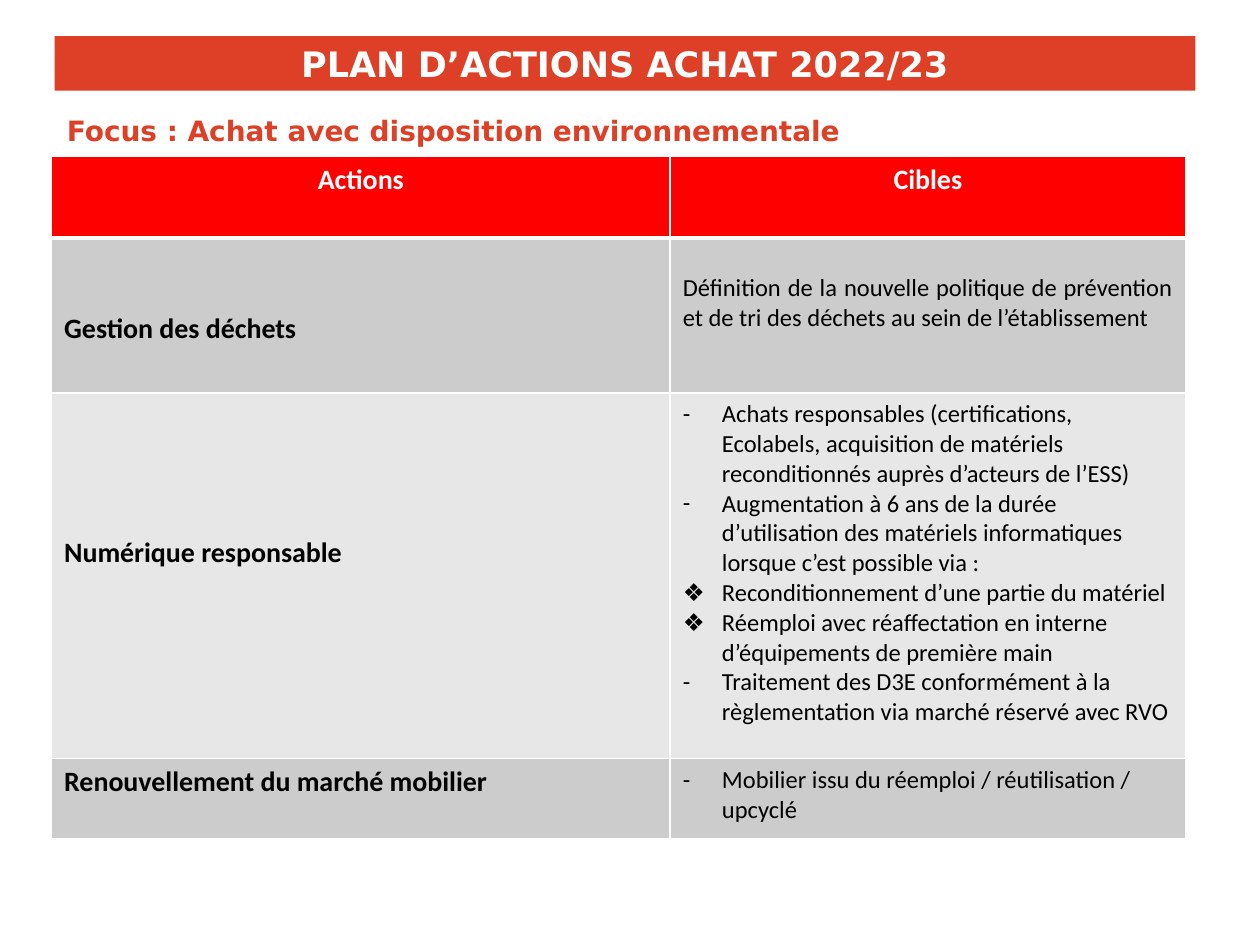
from dataclasses import dataclass

import pptx
import pptx.dml.color
import pptx.enum.shapes
import pptx.enum.text
import pptx.util
from lxml import etree
from pptx.util import Cm


@dataclass(frozen=True)
class Theme:
    accent: str = "DD4026"
    header: str = "FF0000"
    bands: tuple = ("CCCCCC", "E7E7E7")
    white: str = "FFFFFF"
    black: str = "000000"
    heading_font: str = "DejaVu Sans"
    table_font: str = "Calibri"
    title_size: int = 20
    label_size: int = 16
    body_size: int = 14


theme = Theme()
align = pptx.enum.text.PP_ALIGN
rgb = pptx.dml.color.RGBColor.from_string
qn = pptx.oxml.ns.qn


def style(paragraph, name, size, color, bold=True):
    font = paragraph.font
    font.name, font.size, font.bold = name, pptx.util.Pt(size), bold
    font.color.rgb = rgb(color)


def add_bullet(paragraph, symbol):
    """Give the paragraph a hanging indent and a bullet character."""
    properties = paragraph._p.get_or_add_pPr()
    properties.set("marL", str(Cm(0.79)))
    properties.set("indent", str(-Cm(0.79)))
    etree.SubElement(properties, qn("a:buFont")).set("typeface", theme.table_font)
    etree.SubElement(properties, qn("a:buChar")).set("char", symbol)


presentation = pptx.Presentation()
presentation.slide_width, presentation.slide_height = Cm(25.4), Cm(19.05)
slide = presentation.slides.add_slide(presentation.slide_layouts[6])

# Title banner and subtitle
banner = slide.shapes.add_shape(
    pptx.enum.shapes.MSO_SHAPE.RECTANGLE, Cm(1.1), Cm(0.73), Cm(23), Cm(1.1))
banner.shadow.inherit = False
banner.fill.solid()
banner.fill.fore_color.rgb = rgb(theme.accent)
banner.line.fill.background()
banner.text_frame.vertical_anchor = pptx.enum.text.MSO_ANCHOR.MIDDLE
paragraph = banner.text_frame.paragraphs[0]
paragraph.text = "PLAN D’ACTIONS ACHAT 2022/23"
paragraph.alignment = align.CENTER
style(paragraph, theme.heading_font, theme.title_size, theme.white)

subtitle = slide.shapes.add_textbox(Cm(1.1), Cm(1.83), Cm(22.86), Cm(1.3))
subtitle.text_frame.word_wrap = True
paragraph = subtitle.text_frame.paragraphs[0]
paragraph.text = "Focus : Achat avec disposition environnementale"
paragraph.line_spacing = 1.5
style(paragraph, theme.heading_font, theme.label_size, theme.accent)

# Each row: height, action, top margin of action, targets as (bullet, text),
# top margin of targets
rows = [
    (3.12, "Gestion des déchets", 1.49, [
        ("", "Définition de la nouvelle politique de prévention et de tri "
             "des déchets au sein de l’établissement"),
    ], 0.71),
    (7.37, "Numérique responsable", 2.88, [
        ("-", "Achats responsables (certifications, Ecolabels, acquisition de "
              "matériels reconditionnés auprès d’acteurs de l’ESS)"),
        ("-", "Augmentation à 6 ans de la durée d’utilisation des matériels "
              "informatiques lorsque c’est possible via :"),
        ("❖", "Reconditionnement d’une partie du matériel"),
        ("❖", "Réemploi avec réaffectation en interne d’équipements de "
              "première main"),
        ("-", "Traitement des D3E conformément à la règlementation via marché "
              "réservé avec RVO"),
    ], 0.13),
    (1.62, "Renouvellement du marché mobilier", 0.13, [
        ("-", "Mobilier issu du réemploi / réutilisation / upcyclé"),
    ], 0.13),
]
header_height = 1.65
table_height = header_height + sum(row[0] for row in rows)
table = slide.shapes.add_table(
    len(rows) + 1, 2, Cm(1.04), Cm(3.15), Cm(22.86), Cm(table_height)).table
table.columns[0].width, table.columns[1].width = Cm(12.47), Cm(10.39)

table.rows[0].height = Cm(header_height)
for cell, heading in zip(table.rows[0].cells, ("Actions", "Cibles")):
    cell.fill.solid()
    cell.fill.fore_color.rgb = rgb(theme.header)
    border = etree.Element(qn("a:lnB"), w=str(pptx.util.Pt(3)))
    border_fill = etree.SubElement(border, qn("a:solidFill"))
    etree.SubElement(border_fill, qn("a:srgbClr")).set("val", theme.white)
    cell._tc.get_or_add_tcPr().insert(0, border)
    paragraph = cell.text_frame.paragraphs[0]
    paragraph.text = heading
    paragraph.alignment = align.CENTER
    style(paragraph, theme.table_font, theme.label_size, theme.white)

for index, (height, action, action_top, targets, targets_top) in enumerate(rows):
    row = table.rows[index + 1]
    row.height = Cm(height)
    action_cell, target_cell = row.cells
    for cell, top in ((action_cell, action_top), (target_cell, targets_top)):
        cell.fill.solid()
        cell.fill.fore_color.rgb = rgb(theme.bands[index % 2])
        cell.margin_top = Cm(top)

    paragraph = action_cell.text_frame.paragraphs[0]
    paragraph.text = action
    style(paragraph, theme.table_font, theme.label_size, theme.black)

    target_cell.text_frame.text = "\n".join(text for _, text in targets)
    for paragraph, (symbol, _) in zip(target_cell.text_frame.paragraphs, targets):
        if symbol:
            add_bullet(paragraph, symbol)
        else:
            paragraph.alignment = align.JUSTIFY
        style(paragraph, theme.table_font, theme.body_size, theme.black, bold=False)

presentation.save("out.pptx")
